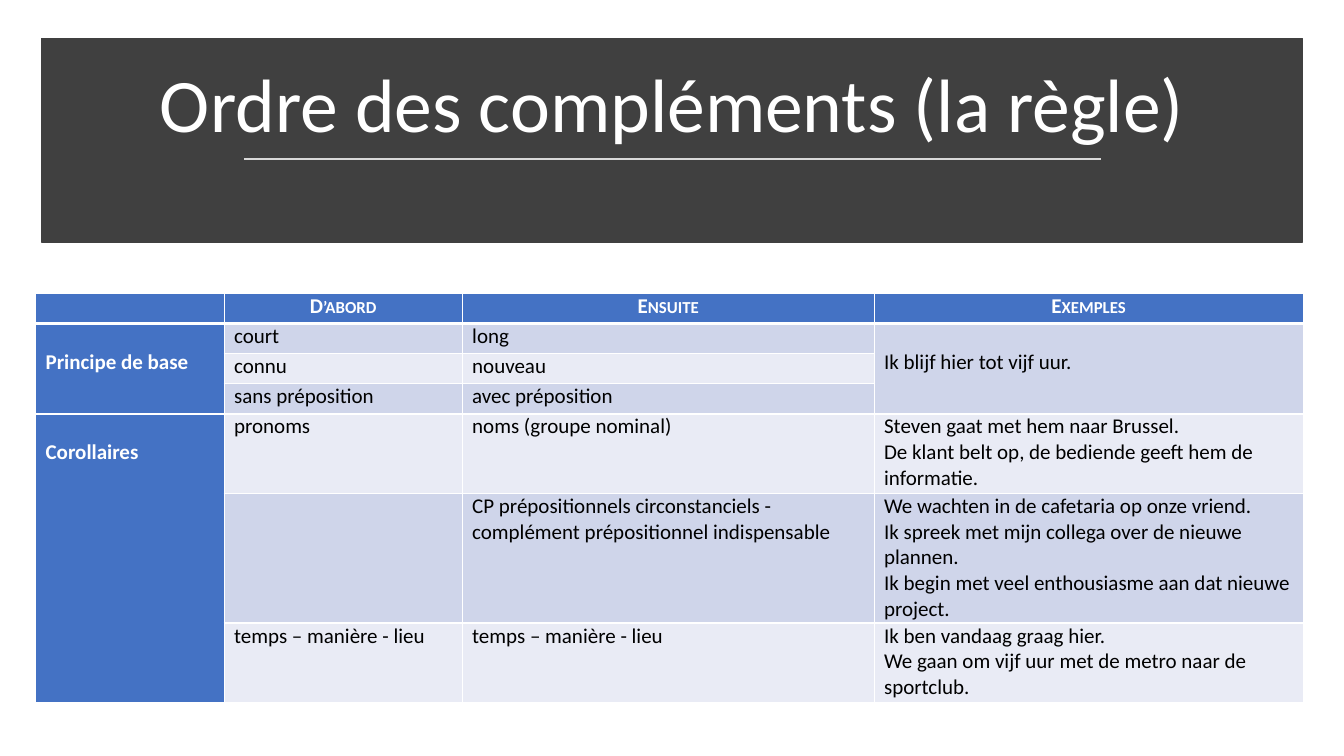
from dataclasses import dataclass

from lxml import etree
from pptx import Presentation
from pptx.dml.color import RGBColor
from pptx.enum import shapes, text
from pptx.oxml.ns import qn
from pptx.util import Cm, Pt

TITLE = "Ordre des compléments (la règle)"
HEADERS = ["", "D’abord", "Ensuite", "Exemples"]
# A string is one paragraph, a tuple several; None continues the cell above.
ROWS = [
    ["Principe de base", "court", "long", "Ik blijf hier tot vijf uur."],
    [None, "connu", "nouveau", None],
    [None, "sans préposition", "avec préposition", None],
    ["Corollaires", "pronoms", "noms (groupe nominal)",
     ("Steven gaat met hem naar Brussel.",
      "De klant belt op, de bediende geeft hem de informatie.")],
    [None, "",
     "CP prépositionnels circonstanciels - complément prépositionnel indispensable",
     ("We wachten in de cafetaria op onze vriend.",
      "Ik spreek met mijn collega over de nieuwe plannen.",
      "Ik begin met veel enthousiasme aan dat nieuwe project.")],
    [None, "temps – manière - lieu", "temps – manière - lieu",
     ("Ik ben vandaag graag hier.",
      "We gaan om vijf uur met de metro naar de sportclub.")],
]
COLUMN_WIDTHS = [4.75, 6.0, 10.38, 10.81]
ROW_HEIGHTS = [0.76, 0.76, 0.76, 0.76, 2.0, 3.27, 2.0]
LINE_HEIGHT = 0.65


@dataclass(frozen=True)
class Theme:
    font: str = "Calibri"
    title_size: float = 54
    cell_size: float = 15
    band: str = "404040"
    rule: str = "D9D9D9"
    accent: str = "4472C4"
    odd_row: str = "CFD5EA"
    even_row: str = "E9EBF5"
    light: str = "FFFFFF"
    dark: str = "000000"


THEME = Theme()


def rgb(code):
    return RGBColor.from_string(code)


def style_font(font, size, color, bold=False):
    font.name = THEME.font
    font.size = Pt(size)
    font.bold = bold
    font.color.rgb = rgb(color)


def add_band(page):
    """Draw the dark band behind the title."""
    band = page.shapes.add_shape(shapes.MSO_SHAPE.RECTANGLE,
                                 Cm(1.04), Cm(0.97), Cm(31.78), Cm(5.13))
    band.shadow.inherit = False
    band.fill.solid()
    band.fill.fore_color.rgb = rgb(THEME.band)
    band.line.color.rgb = rgb(THEME.band)
    band.line.width = Pt(1)
    page.shapes._spTree.insert(2, band._element)


def add_title(page):
    title = page.shapes.title
    title.left, title.top = Cm(1.47), Cm(1.3)
    title.width, title.height = Cm(30.94), Cm(2.59)
    frame = title.text_frame
    frame.text = TITLE
    frame.word_wrap = True
    frame.auto_size = text.MSO_AUTO_SIZE.NONE
    frame.vertical_anchor = text.MSO_ANCHOR.BOTTOM
    para = frame.paragraphs[0]
    para.alignment = text.PP_ALIGN.CENTER
    para.line_spacing = 0.9
    style_font(para.runs[0].font, THEME.title_size, THEME.light)


def add_title_rule(page):
    rule = page.shapes.add_connector(shapes.MSO_CONNECTOR.STRAIGHT,
                                     Cm(6.15), Cm(4.01), Cm(27.74), Cm(4.01))
    rule.line.color.rgb = rgb(THEME.rule)
    rule.line.width = Pt(1.75)
    etree.SubElement(rule._element.spPr, qn("a:effectLst"))


def set_borders(cell, widths):
    """Draw light borders; widths maps L, R, T and B to points."""
    properties = cell._tc.get_or_add_tcPr()
    for index, (side, width) in enumerate(widths.items()):
        border = etree.Element(qn(f"a:ln{side}"), w=str(Pt(width)))
        fill = etree.SubElement(border, qn("a:solidFill"))
        etree.SubElement(fill, qn("a:srgbClr"), val=THEME.light)
        properties.insert(index, border)


def fill_cell(cell, content, row, column):
    is_header = row == 0
    is_accent = is_header or column == 0
    stripe = THEME.odd_row if row % 2 else THEME.even_row
    cell.fill.solid()
    cell.fill.fore_color.rgb = rgb(THEME.accent if is_accent else stripe)
    set_borders(cell, {"L": 1, "R": 1, "T": 3 if row == 1 else 1,
                       "B": 3 if is_header else 1})
    cell.margin_left = cell.margin_right = Cm(0.25)
    cell.margin_top = cell.margin_bottom = 0

    lines = content if isinstance(content, tuple) else (content or "",)
    cell.text_frame.text = "\n".join(lines)
    for para in cell.text_frame.paragraphs:
        para.alignment = text.PP_ALIGN.CENTER if is_header else text.PP_ALIGN.LEFT
        for span in para.runs:
            style_font(span.font, THEME.cell_size,
                       THEME.light if is_accent else THEME.dark, is_accent)
            if is_header:
                span.font._element.set("cap", "small")
        if not para.runs:
            etree.SubElement(para._p, qn("a:endParaRPr"),
                             sz=str(int(THEME.cell_size * 100)))


def merge_continued(table, cells):
    """Merge each cell with the None entries below it, one line lower."""
    for column in range(len(COLUMN_WIDTHS)):
        for row in range(len(cells)):
            last = row
            while last + 1 < len(cells) and cells[last + 1][column] is None:
                last += 1
            if cells[row][column] is not None and last > row:
                table.cell(row, column).merge(table.cell(last, column))
                table.cell(row, column).margin_top = Cm(LINE_HEIGHT)


def add_rule_table(page):
    cells = [HEADERS] + ROWS
    table = page.shapes.add_table(len(cells), len(HEADERS), Cm(0.9), Cm(7.39),
                                  Cm(sum(COLUMN_WIDTHS)), Cm(sum(ROW_HEIGHTS))).table
    for column, width in zip(table.columns, COLUMN_WIDTHS):
        column.width = Cm(width)
    for row, height in zip(table.rows, ROW_HEIGHTS):
        row.height = Cm(height)
    for row, contents in enumerate(cells):
        for column, content in enumerate(contents):
            fill_cell(table.cell(row, column), content, row, column)
    merge_continued(table, cells)


def main():
    deck = Presentation()
    deck.slide_width, deck.slide_height = Cm(33.87), Cm(19.05)
    page = deck.slides.add_slide(deck.slide_layouts.get_by_name("Title Only"))
    add_band(page)
    add_title(page)
    add_title_rule(page)
    add_rule_table(page)
    deck.save("out.pptx")


if __name__ == "__main__":
    main()
